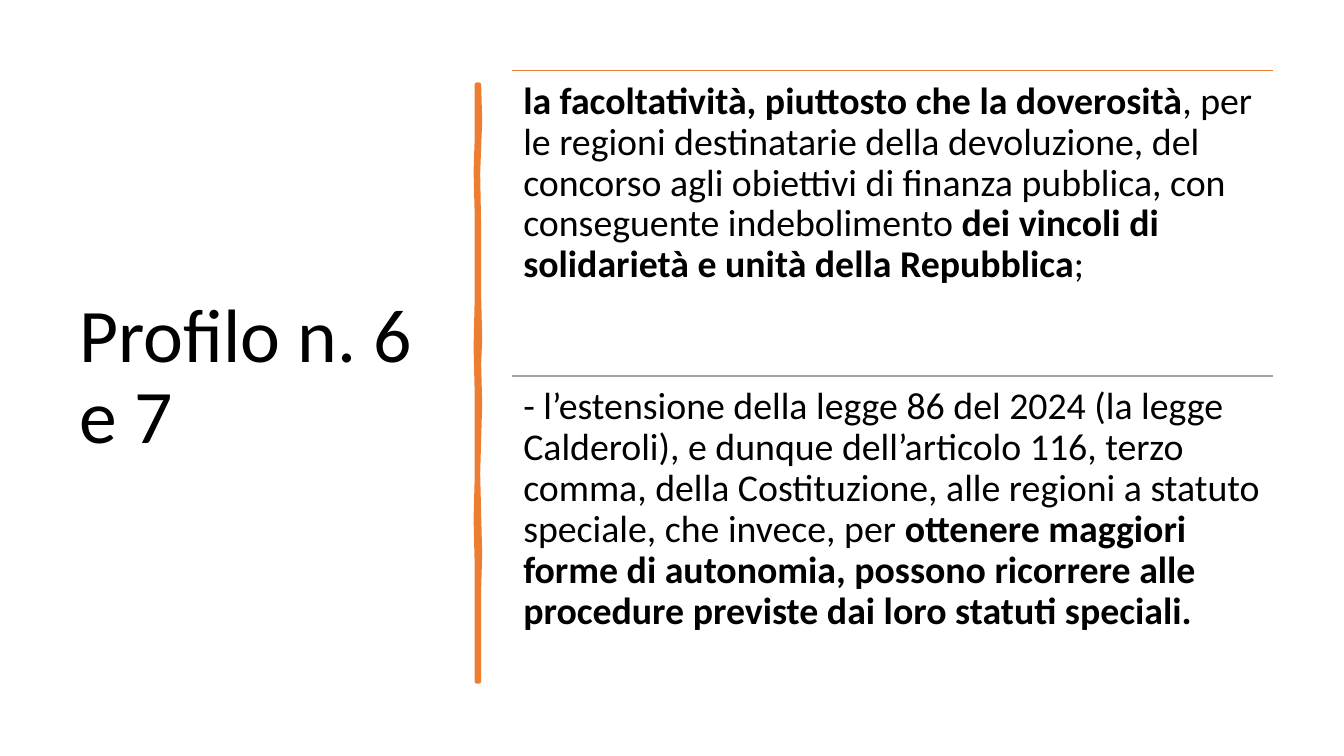
"""Build the slide on profiles 6 and 7 with a brushed divider and two ruled passages."""
import dataclasses

import lxml.etree
import pptx
import pptx.dml.color
import pptx.enum.shapes
import pptx.enum.text
import pptx.oxml.ns
import pptx.util

PX = 9144


@dataclasses.dataclass(frozen=True)
class Theme:
    font: str = "Calibri"
    ink: str = "000000"
    accent: str = "ED7D31"
    grey: str = "A5A5A5"
    head: int = 54
    body: int = 27
    rule: float = 1
    brush: float = 3.25


class Deck:
    def __init__(self, theme):
        self.theme = theme
        self.show = pptx.Presentation()
        self.show.slide_width = 1333 * PX
        self.show.slide_height = 750 * PX
        self.slide = self.show.slides.add_slide(self.show.slide_layouts[5])

    def color(self, code):
        return pptx.dml.color.RGBColor.from_string(code)

    def place(self, shape, box):
        shape.left, shape.top, shape.width, shape.height = (n * PX for n in box)

    def style(self, para, size):
        para.alignment = pptx.enum.text.PP_ALIGN.LEFT
        para.line_spacing = 0.9
        for run in para.runs:
            run.font.name = self.theme.font
            run.font.size = pptx.util.Pt(size)
            run.font.color.rgb = self.color(self.theme.ink)

    def title(self, text, box):
        shape = self.slide.shapes.title
        self.place(shape, box)
        frame = shape.text_frame
        frame.text = text
        frame.word_wrap = True
        frame.auto_size = pptx.enum.text.MSO_AUTO_SIZE.NONE
        frame.vertical_anchor = pptx.enum.text.MSO_ANCHOR.MIDDLE
        self.style(frame.paragraphs[0], self.theme.head)

    def brush(self, points):
        pen = self.slide.shapes.build_freeform(*points[0], scale=PX)
        pen.add_line_segments(points[1:], close=True)
        shape = pen.convert_to_shape()
        shape.shadow.inherit = False
        shape.fill.solid()
        shape.fill.fore_color.rgb = self.color(self.theme.accent)
        self.stroke(shape.line, self.theme.accent, self.theme.brush)
        edge = shape.line.fill._xPr
        lxml.etree.SubElement(edge, pptx.oxml.ns.qn("a:round"))

    def stroke(self, line, code, width):
        line.color.rgb = self.color(code)
        line.width = pptx.util.Pt(width)

    def rule(self, left, top, width, code):
        kind = pptx.enum.shapes.MSO_CONNECTOR.STRAIGHT
        ends = (left * PX, top * PX, (left + width) * PX, top * PX)
        line = self.slide.shapes.add_connector(kind, *ends)
        self.stroke(line.line, code, self.theme.rule)
        props = line._element.spPr
        lxml.etree.SubElement(props, pptx.oxml.ns.qn("a:effectLst"))

    def passage(self, parts, box):
        shape = self.slide.shapes.add_textbox(*(n * PX for n in box))
        frame = shape.text_frame
        frame.word_wrap = True
        frame.margin_left = frame.margin_right = 11 * PX
        frame.margin_top = frame.margin_bottom = 11 * PX
        para = frame.paragraphs[0]
        for text, bold in parts:
            run = para.add_run()
            run.text = text
            run.font.bold = bold
        para.space_after = pptx.util.Pt(9)
        self.style(para, self.theme.body)


RIGHT = [(475, 84), (476, 120), (475, 146), (474, 172), (475, 226),
         (475, 294), (476, 335), (475, 362), (476, 400), (475, 436),
         (474, 470), (475, 510), (476, 550), (475, 584), (475, 676)]
LEFT = [(473, 676), (473, 613), (473, 557), (472, 515), (473, 477),
        (473, 415), (473, 386), (472, 345), (473, 300), (473, 250),
        (473, 210), (472, 170), (473, 140), (473, 84)]

PARTS = [
    [("la facoltatività, piuttosto che la doverosità", True),
     (", per le regioni destinatarie della devoluzione, del concorso agli "
      "obiettivi di finanza pubblica, con conseguente indebolimento ", False),
     ("dei vincoli di solidarietà e unità della Repubblica", True),
     (";", False)],
    [("- l’estensione della legge 86 del 2024 (la legge Calderoli), e dunque "
      "dell’articolo 116, terzo comma, della Costituzione, alle regioni a "
      "statuto speciale, che invece, per ", False),
     ("ottenere maggiori forme di autonomia, possono ricorrere alle "
      "procedure previste dai loro statuti speciali.", True)],
]


def main():
    theme = Theme()
    deck = Deck(theme)
    deck.title("Profilo n. 6 e 7", (69, 70, 374, 611))
    deck.brush(RIGHT + LEFT)
    left, top, width, height = 508, 70, 755, 303
    for row, (parts, code) in enumerate(zip(PARTS, (theme.accent, theme.grey))):
        y = top + row * height
        deck.rule(left, y, width, code)
        deck.passage(parts, (left, y, width, height))
    deck.show.save("out.pptx")


if __name__ == "__main__":
    main()
